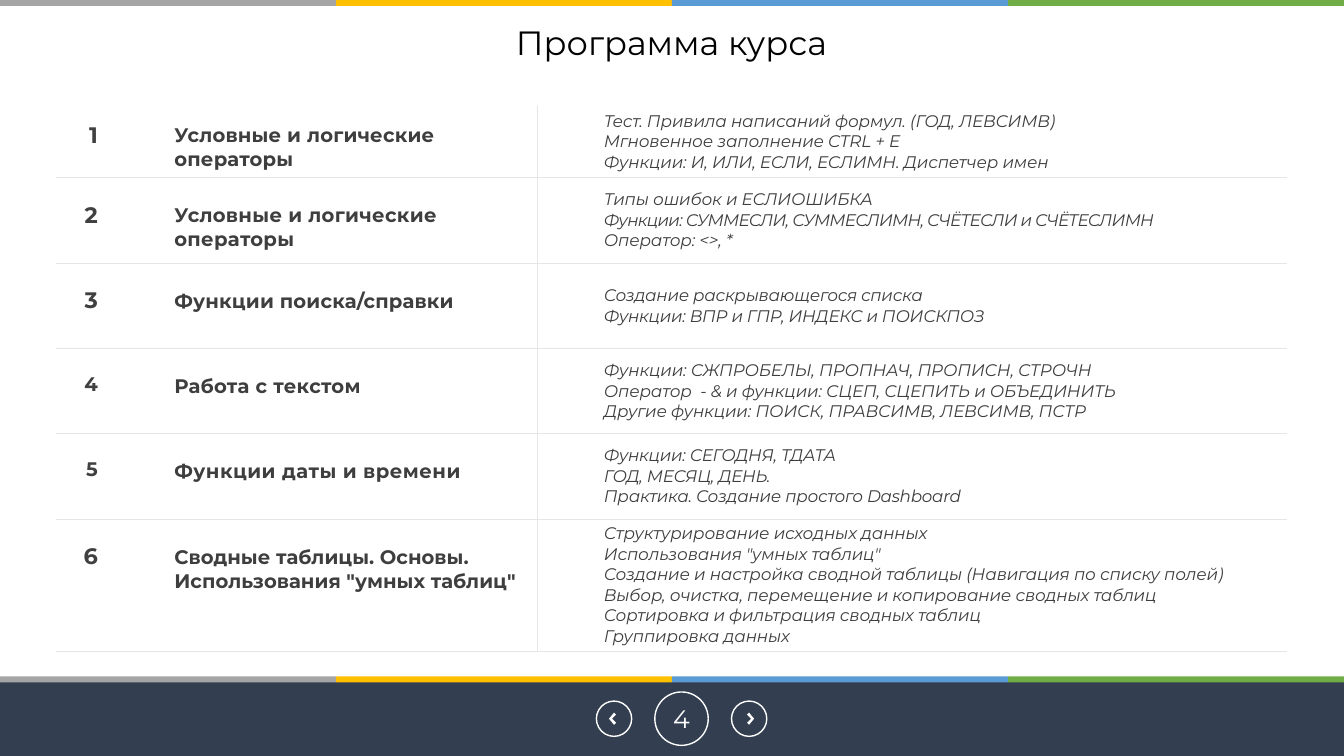
import dataclasses
import itertools

import lxml.etree
import pptx
import pptx.dml.color
import pptx.enum.shapes
import pptx.enum.text
import pptx.oxml.ns
import pptx.util

Inches = pptx.util.Inches
Pt = pptx.util.Pt
Shape = pptx.enum.shapes.MSO_SHAPE
Align = pptx.enum.text.PP_ALIGN
Anchor = pptx.enum.text.MSO_ANCHOR
qn = pptx.oxml.ns.qn


@dataclasses.dataclass(frozen=True)
class Theme:
    font: str = "Montserrat"
    black: str = "000000"
    white: str = "FFFFFF"
    footer: str = "333F50"
    number: str = "404040"
    body: str = "3E3E3E"
    rule: str = "E7E6E6"
    stripes: tuple = ("A5A5A5", "FFC000", "5B9BD5", "70AD47")
    title_size: float = 24
    page_size: float = 18
    name_size: float = 14
    detail_size: float = 12
    rule_width: float = 0.75


@dataclasses.dataclass(frozen=True)
class Lesson:
    height: float
    number_size: float
    name: str
    name_tracking: float
    details: tuple
    detail_tracking: tuple


THEME = Theme()
SLIDE_WIDTH, SLIDE_HEIGHT = 13.33, 7.5
NO_GRID_STYLE = "{2D5ABB26-0587-4C30-8999-92F81FD0307C}"
COLUMN_WIDTHS = (0.79, 3.98, 7.44)
LESSONS = (
    Lesson(0.71, 16, "Условные и логические операторы", 0.1, (
        "Тест. Привила написаний формул. (ГОД, ЛЕВСИМВ)",
        "Мгновенное заполнение CTRL + E",
        "Функции: И, ИЛИ, ЕСЛИ, ЕСЛИМН. Диспетчер имен"), (-0.1,)),
    Lesson(0.85, 16, "Условные и логические операторы", 0.2, (
        "Типы ошибок и ЕСЛИОШИБКА",
        "Функции: СУММЕСЛИ, СУММЕСЛИМН, СЧЁТЕСЛИ и СЧЁТЕСЛИМН",
        "Оператор: <>, *"), (-0.1, -0.5)),
    Lesson(0.85, 16, "Функции поиска/справки", 0.1, (
        "Создание раскрывающегося списка",
        "Функции: ВПР и ГПР, ИНДЕКС и ПОИСКПОЗ"), (-0.2,)),
    Lesson(0.84, 14, "Работа с текстом", 0.2, (
        "Функции: СЖПРОБЕЛЫ, ПРОПНАЧ, ПРОПИСН, СТРОЧН",
        "Оператор  - & и функции: СЦЕП, СЦЕПИТЬ и ОБЪЕДИНИТЬ",
        "Другие функции: ПОИСК, ПРАВСИМВ, ЛЕВСИМВ, ПСТР"), (-0.1,)),
    Lesson(0.85, 14, "Функции даты и времени", 0.3, (
        "Функции: СЕГОДНЯ, ТДАТА",
        "ГОД, МЕСЯЦ, ДЕНЬ.",
        "Практика. Создание простого Dashboard"), (-0.2,)),
    Lesson(1.31, 16, "Сводные таблицы. Основы. Использования \"умных таблиц\"", 0, (
        "Структурирование исходных данных",
        "Использования \"умных таблиц\"",
        "Создание и настройка сводной таблицы (Навигация по списку полей)",
        "Выбор, очистка, перемещение и копирование сводных таблиц",
        "Сортировка и фильтрация сводных таблиц",
        "Группировка данных"), (-0.1,)),
)


def rgb(color):
    return pptx.dml.color.RGBColor.from_string(color)


def format_text(text_frame, size, color, align=Align.LEFT, bold=False, italic=False, tracking=(0,)):
    for paragraph, spacing in zip(text_frame.paragraphs, itertools.cycle(tracking)):
        paragraph.alignment = align
        for run in paragraph.runs:
            run.font.name = THEME.font
            run.font.size = Pt(size)
            run.font.color.rgb = rgb(color)
            run.font.bold = bold
            run.font.italic = italic
            if spacing:
                run.font._element.set("spc", str(round(spacing * 100)))


def set_margins(target, left=0, top=0, right=0, bottom=0):
    target.margin_left, target.margin_top = Inches(left), Inches(top)
    target.margin_right, target.margin_bottom = Inches(right), Inches(bottom)


def paint(shape, fill=None, line=None):
    shape.shadow.inherit = False
    if fill:
        shape.fill.solid()
        shape.fill.fore_color.rgb = rgb(fill)
    else:
        shape.fill.background()
    if line:
        shape.line.color.rgb = rgb(line)
        shape.line.width = Pt(1)
    else:
        shape.line.fill.background()


def add_block(slide, preset, left, top, width, height, fill=None, line=None):
    shape = slide.shapes.add_shape(preset, Inches(left), Inches(top), Inches(width), Inches(height))
    paint(shape, fill, line)


def add_stripes(slide, left, top, width, height):
    step = width / len(THEME.stripes)
    for index, color in enumerate(THEME.stripes):
        add_block(slide, Shape.RECTANGLE, left + index * step, top, step, height, fill=color)


def add_circle(slide, center_x, center_y, diameter):
    add_block(slide, Shape.OVAL, center_x - diameter / 2, center_y - diameter / 2,
              diameter, diameter, line=THEME.white)


def add_chevron(slide, center_x, center_y, direction):
    outline = ((0.03, 0), (-0.02, 0.06), (-0.04, 0.04), (0, 0), (-0.04, -0.04), (-0.02, -0.06))
    points = [(Inches(center_x + direction * x), Inches(center_y + y)) for x, y in outline]
    builder = slide.shapes.build_freeform(*points[0])
    builder.add_line_segments(points[1:], close=True)
    paint(builder.convert_to_shape(), fill=THEME.white)


def add_footer(slide, left, top, width, height):
    add_block(slide, Shape.RECTANGLE, left, top, width, height, fill=THEME.footer)
    center_x, center_y = left + 6.76, top + 0.37
    for direction in (-1, 1):
        button_x = center_x + direction * 0.67
        add_circle(slide, button_x, center_y, 0.35)
        add_chevron(slide, button_x + direction * 0.02, center_y, direction)
    add_circle(slide, center_x, center_y, 0.53)
    page = slide.shapes.add_textbox(Inches(center_x - 0.32), Inches(center_y - 0.17), Inches(0.64), Inches(0.33))
    page.text_frame.word_wrap = True
    page.text_frame.vertical_anchor = Anchor.MIDDLE
    set_margins(page.text_frame, top=0.07, bottom=0.07)
    page.text_frame.text = "4"
    format_text(page.text_frame, THEME.page_size, THEME.white, Align.CENTER)


def add_title(slide, left, top, width, height):
    title = slide.shapes.title
    title.left, title.top, title.width, title.height = map(Inches, (left, top, width, height))
    title.text_frame.text = "Программа курса"
    title.text_frame.vertical_anchor = Anchor.MIDDLE
    title.text_frame.paragraphs[0].line_spacing = 0.9
    format_text(title.text_frame, THEME.title_size, THEME.black, Align.CENTER)


def set_borders(cell, sides):
    properties = cell._tc.get_or_add_tcPr()
    for position, side in enumerate(sides):
        line = lxml.etree.Element(qn("a:" + side), w=str(Pt(THEME.rule_width)))
        fill = lxml.etree.SubElement(line, qn("a:solidFill"))
        lxml.etree.SubElement(fill, qn("a:srgbClr"), val=THEME.rule)
        properties.insert(position, line)


def add_program(slide, left, top, width, height):
    frame = slide.shapes.add_table(len(LESSONS), len(COLUMN_WIDTHS), Inches(left), Inches(top),
                                   Inches(width), Inches(height))
    table = frame.table
    table.first_row = table.horz_banding = False
    table._tbl.tblPr.find(qn("a:tableStyleId")).text = NO_GRID_STYLE
    for column, column_width in zip(table.columns, COLUMN_WIDTHS):
        column.width = Inches(column_width)
    for index, lesson in enumerate(LESSONS):
        table.rows[index].height = Inches(lesson.height)
        number, name, details = table.rows[index].cells
        number_top = 0.24 if index else 0.16
        set_margins(number, top=number_top, right=0.38)
        set_margins(name, left=0.38, top=number_top + 0.02)
        set_margins(details, left=0.66)
        details.vertical_anchor = Anchor.MIDDLE
        number.text_frame.text = str(index + 1)
        name.text_frame.text = lesson.name
        details.text_frame.text = "\n".join(lesson.details)
        format_text(number.text_frame, lesson.number_size, THEME.number, Align.RIGHT, bold=True)
        format_text(name.text_frame, THEME.name_size, THEME.body, bold=True, tracking=(lesson.name_tracking,))
        format_text(details.text_frame, THEME.detail_size, THEME.body, italic=True, tracking=lesson.detail_tracking)
        for cell, sides in ((number, ("lnB",)), (name, ("lnR", "lnB")), (details, ("lnL", "lnB"))):
            cell.fill.background()
            set_borders(cell, sides)


def main():
    presentation = pptx.Presentation()
    presentation.slide_width, presentation.slide_height = Inches(SLIDE_WIDTH), Inches(SLIDE_HEIGHT)
    slide = presentation.slides.add_slide(presentation.slide_layouts[5])
    add_footer(slide, 0, 6.76, SLIDE_WIDTH, 0.74)
    for stripe_top in (6.71, 0):
        add_stripes(slide, 0, stripe_top, SLIDE_WIDTH, 0.06)
    add_title(slide, 0.91, 0.2, 11.5, 0.48)
    add_program(slide, 0.56, 1.05, sum(COLUMN_WIDTHS), sum(lesson.height for lesson in LESSONS))
    presentation.save("out.pptx")


if __name__ == "__main__":
    main()
